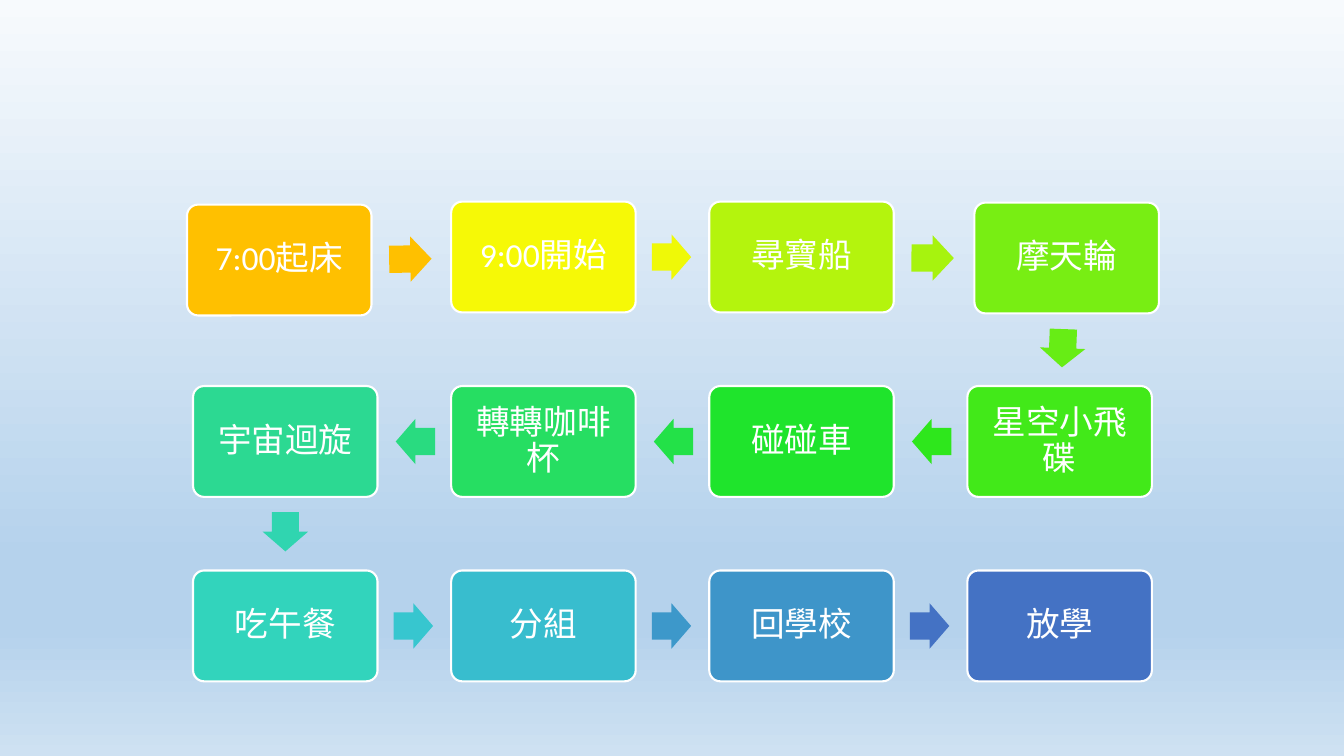
from lxml.etree import SubElement
from pptx import Presentation
from pptx.dml.color import RGBColor
from pptx.enum.shapes import MSO_SHAPE
from pptx.enum.text import MSO_ANCHOR, PP_ALIGN
from pptx.oxml.ns import qn
from pptx.util import Inches, Pt


def rgb(value):
    return RGBColor.from_string(value)


def add_filled(kind, center_x, center_y, width, height, color):
    shape = slide.shapes.add_shape(
        kind, Inches(center_x - width / 2), Inches(center_y - height / 2),
        Inches(width), Inches(height))
    shape.shadow.inherit = False
    shape.fill.solid()
    shape.fill.fore_color.rgb = rgb(color)
    return shape


prs = Presentation()
prs.slide_width = Inches(13.33)
prs.slide_height = Inches(7.5)
slide = prs.slides.add_slide(prs.slide_layouts[6])

sky = slide.background.fill
sky.gradient()
sky.gradient_angle = 270
sky_stops = next(slide._element.iter(qn("a:gsLst")))
for stop in list(sky_stops):
    sky_stops.remove(stop)
for percent, color in [(0, "F7FAFD"), (74, "B5D2EC"), (83, "B5D2EC"), (100, "CEE1F2")]:
    stop = SubElement(sky_stops, qn("a:gs"), pos=str(percent * 1000))
    SubElement(stop, qn("a:srgbClr"), val=color)

activities = [
    ("7:00起床", "FFC000"), ("9:00開始", "F6F906"), ("尋寶船", "B4F40D"),
    ("摩天輪", "78EE13"), ("星空小飛碟", "42E919"), ("碰碰車", "1FE42C"),
    ("轉轉咖啡杯", "26DE62"), ("宇宙迴旋", "2CD992"), ("吃午餐", "32D4BC"),
    ("分組", "38BDCE"), ("回學校", "3E95C9"), ("放學", "4472C4"),
]
arrow_colors = ["FFC000", "EFF907", "A7F30E", "67ED15", "2EE71C", "23E148",
                "29DB80", "30D5B0", "37C6CF", "3D98CA", "4472C4"]
activity_nudges = {0: (-0.06, 0.03), 3: (0.07, 0.01)}
arrow_nudges = {0: (-0.03, 0.02, 0.42, -0.8), 1: (0, 0, 0.39, 0.1),
                2: (0.03, 0.01, 0.42, 0.2), 3: (0.03, 0.01, 0.38, 2.1)}

COLUMNS = 4
FIRST_X, STEP_X = 2.83, 2.56
FIRST_Y, STEP_Y = 2.55, 1.83

for index, (activity, color) in enumerate(activities):
    row, column = divmod(index, COLUMNS)
    direction = 1 if row % 2 == 0 else -1
    if direction < 0:
        column = COLUMNS - 1 - column
    x = FIRST_X + column * STEP_X
    y = FIRST_Y + row * STEP_Y

    dx, dy = activity_nudges.get(index, (0, 0))
    box = add_filled(MSO_SHAPE.ROUNDED_RECTANGLE, x + dx, y + dy, 1.83, 1.1, color)
    box.adjustments[0] = 0.1
    box.line.color.rgb = rgb("FFFFFF")
    box.line.width = Pt(1.5)
    frame = box.text_frame
    frame.word_wrap = True
    frame.vertical_anchor = MSO_ANCHOR.MIDDLE
    frame.margin_left = frame.margin_right = Inches(0.13)
    frame.margin_top = frame.margin_bottom = Inches(0.13)
    frame.text = activity
    paragraph = frame.paragraphs[0]
    paragraph.alignment = PP_ALIGN.CENTER
    paragraph.line_spacing = 0.9
    font = paragraph.runs[0].font
    font.name = "Calibri"
    font.size = Pt(24)
    font.color.rgb = rgb("FFFFFF")

    if index < len(arrow_colors):
        dx, dy, length, tilt = arrow_nudges.get(index, (0, 0, 0.39, 0))
        if index % COLUMNS == COLUMNS - 1:
            dy += STEP_Y / 2 - 0.02
            angle = 90
        else:
            dx += direction * 1.27
            angle = 0 if direction > 0 else 180
        arrow = add_filled(MSO_SHAPE.RIGHT_ARROW, x + dx, y + dy, length, 0.45,
                           arrow_colors[index])
        arrow.adjustments[0] = 0.6
        arrow.adjustments[1] = 0.5
        arrow.rotation = angle + tilt
        arrow.line.fill.background()

prs.save("out.pptx")
